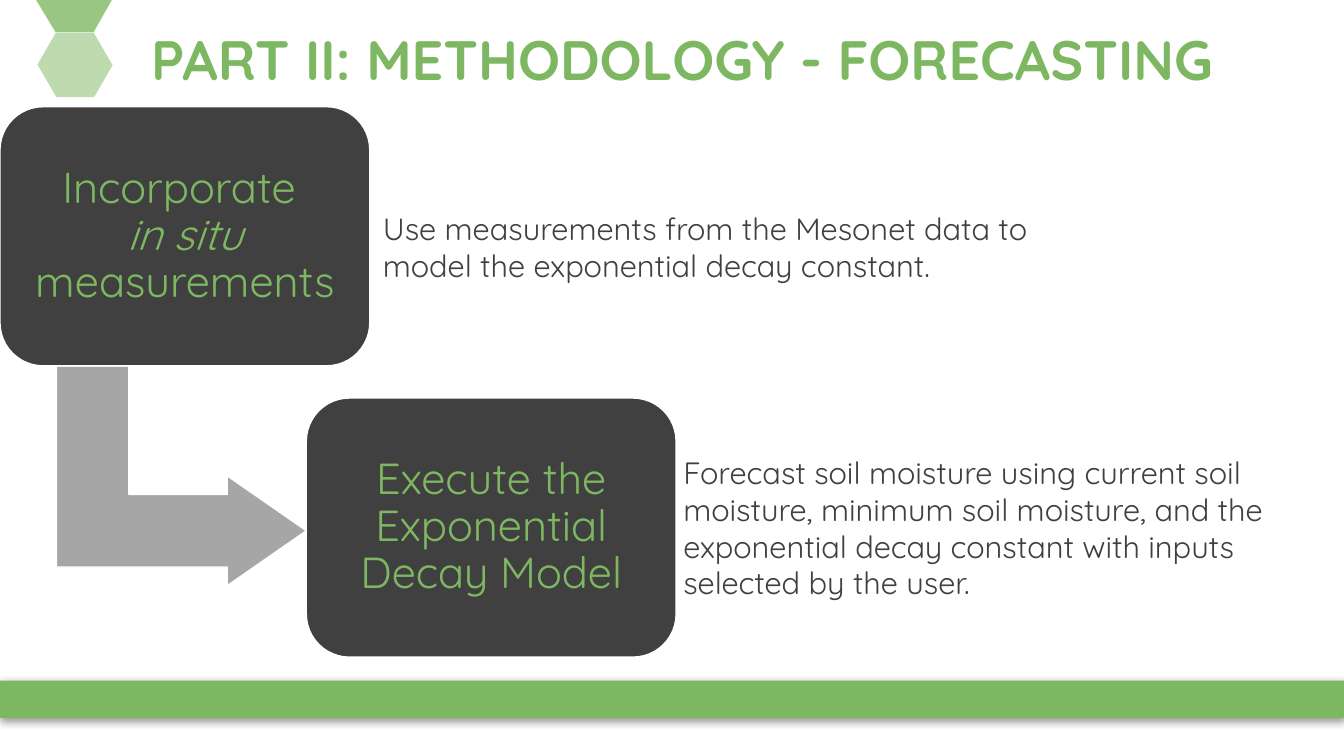
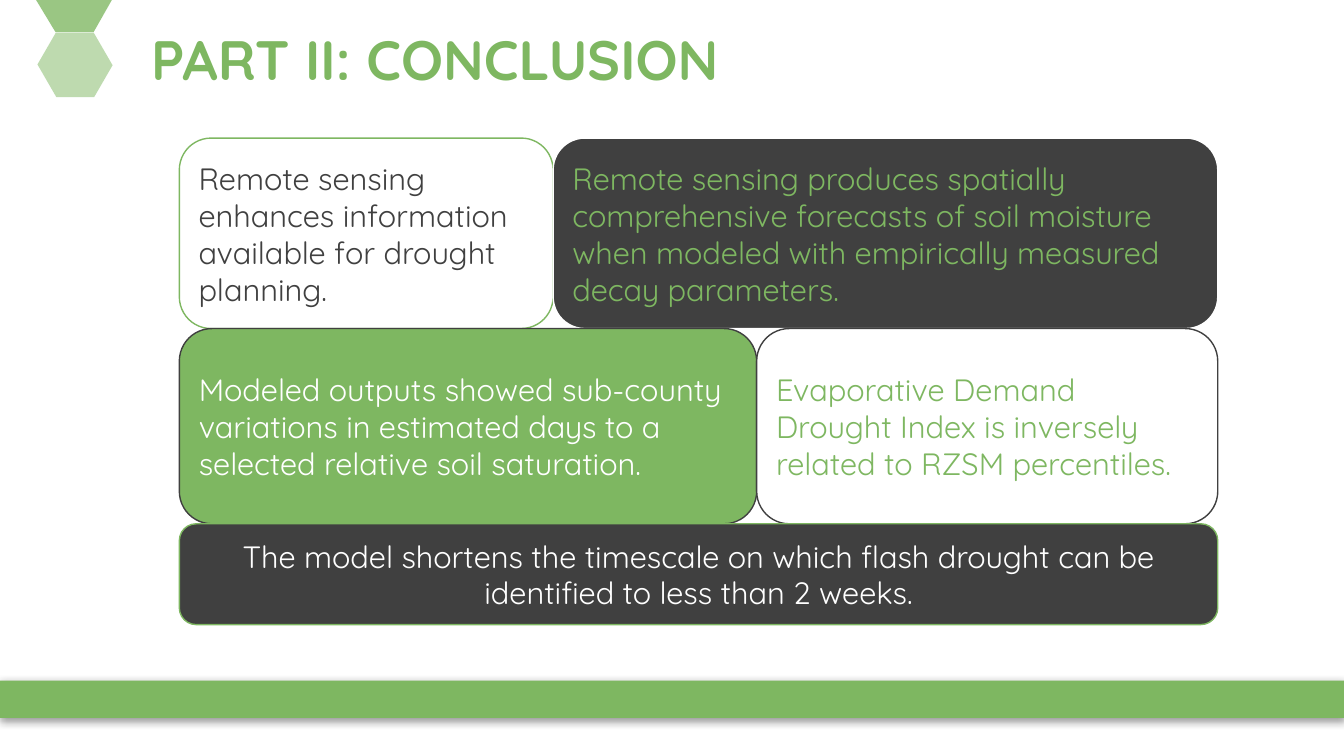
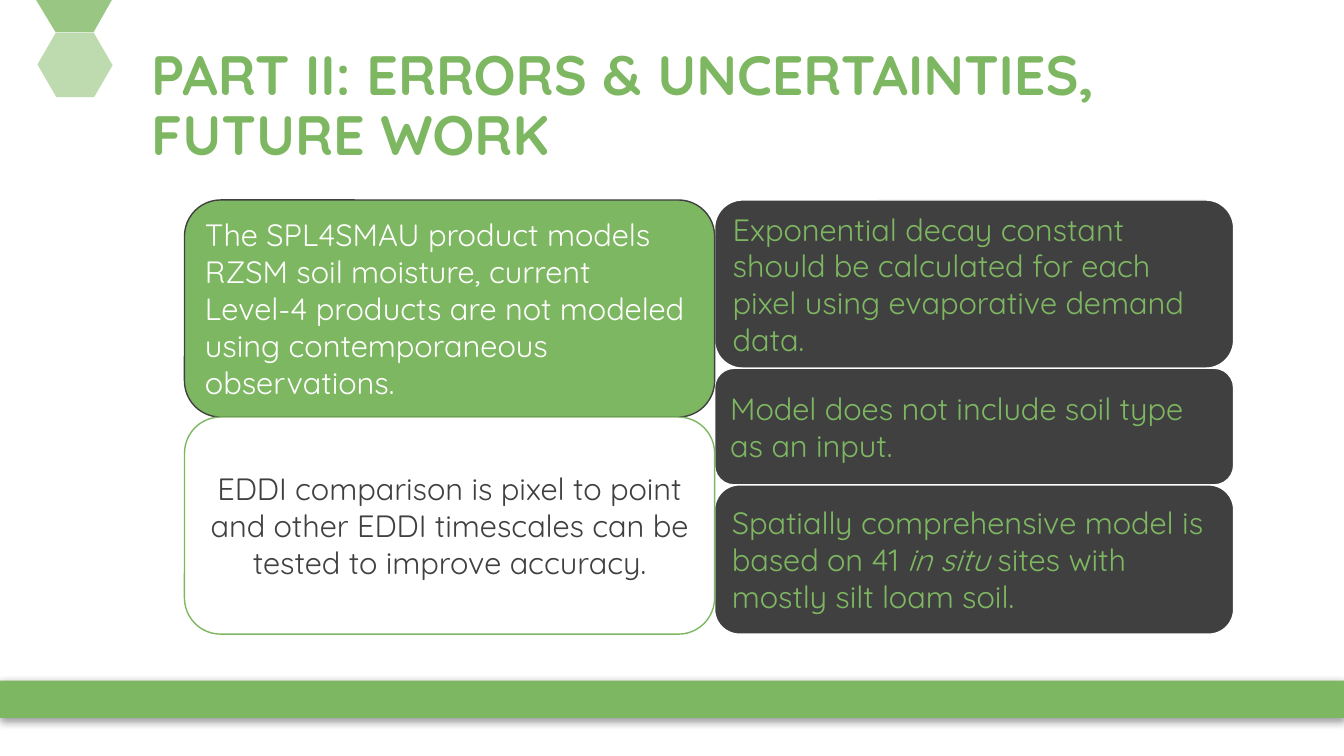
from dataclasses import dataclass

from lxml import etree
from pptx import Presentation
from pptx.dml.color import RGBColor
from pptx.enum.shapes import MSO_SHAPE
from pptx.enum.text import MSO_ANCHOR, PP_ALIGN
from pptx.oxml.ns import qn
from pptx.presentation import Presentation as Deck
from pptx.shapes.autoshape import Shape
from pptx.slide import Slide
from pptx.text.text import TextFrame
from pptx.util import Cm, Pt

# Theme
GREEN = RGBColor(0x7E, 0xB7, 0x61)
CHARCOAL = RGBColor(0x40, 0x40, 0x40)
GREY = RGBColor(0xA6, 0xA6, 0xA6)
WHITE = RGBColor(0xFF, 0xFF, 0xFF)
FONT = "Quicksand"
TITLE_SIZE, STEP_SIZE, BODY_SIZE = 39.6, 31, 22

LEFT, CENTER = PP_ALIGN.LEFT, PP_ALIGN.CENTER
TOP, MIDDLE = MSO_ANCHOR.TOP, MSO_ANCHOR.MIDDLE
ROUNDED, RECTANGLE = MSO_SHAPE.ROUNDED_RECTANGLE, MSO_SHAPE.RECTANGLE
HEXAGON, BENT_ARROW = MSO_SHAPE.HEXAGON, MSO_SHAPE.BENT_UP_ARROW

SLIDE_WIDTH, SLIDE_HEIGHT = 33.87, 19.05


@dataclass(frozen=True)
class Box:
    """Place and size in centimetres."""
    left: float
    top: float
    width: float
    height: float

    def lengths(self) -> tuple[Cm, Cm, Cm, Cm]:
        return Cm(self.left), Cm(self.top), Cm(self.width), Cm(self.height)


@dataclass(frozen=True)
class Look:
    fill: RGBColor
    line: RGBColor
    text: RGBColor


@dataclass(frozen=True)
class Card:
    text: str
    box: Box
    look: Look
    align: PP_ALIGN = LEFT


DARK = Look(CHARCOAL, WHITE, GREEN)
DARK_BANNER = Look(CHARCOAL, GREEN, WHITE)
SOLID_GREEN = Look(GREEN, CHARCOAL, WHITE)
GREEN_OUTLINE = Look(WHITE, GREEN, CHARCOAL)
DARK_OUTLINE = Look(WHITE, CHARCOAL, GREEN)


# Drawing helpers
def write(frame: TextFrame, text: str, size: float, color: RGBColor,
          align: PP_ALIGN = LEFT, anchor: MSO_ANCHOR = MIDDLE,
          bold: bool = False, spacing: float = 1.0) -> None:
    """Write one paragraph; words between asterisks become italic."""
    frame.word_wrap = True
    frame.vertical_anchor = anchor
    paragraph = frame.paragraphs[0]
    paragraph.alignment = align
    paragraph.line_spacing = spacing
    first, *others = text.split("*")
    paragraph.text = first
    for part in others:
        paragraph.add_run().text = part
    for index, run in enumerate(paragraph.runs):
        run.font.name = FONT
        run.font.size = Pt(size)
        run.font.color.rgb = color
        run.font.bold = bold
        run.font.italic = index % 2 == 1


def paint(shape: Shape, fill: RGBColor, line: RGBColor | None = None,
          opacity: int = 100) -> None:
    shape.shadow.inherit = False
    shape.fill.solid()
    shape.fill.fore_color.rgb = fill
    if line is None:
        shape.line.fill.background()
    else:
        shape.line.color.rgb = line
        shape.line.width = Pt(1)
    if opacity < 100:
        color = shape._element.spPr.find(qn("a:solidFill"))[0]
        etree.SubElement(color, qn("a:alpha"), val=str(opacity * 1000))


def add_drop_shadow(shape: Shape) -> None:
    effects = shape._element.spPr.find(qn("a:effectLst"))
    shadow = etree.SubElement(effects, qn("a:outerShdw"), blurRad=str(Pt(6)),
                              dist=str(Pt(2)), dir="5400000", algn="t", rotWithShape="0")
    color = etree.SubElement(shadow, qn("a:srgbClr"), val="000000")
    etree.SubElement(color, qn("a:alpha"), val="40000")


def add_text(slide: Slide, text: str, box: Box) -> None:
    frame = slide.shapes.add_textbox(*box.lengths()).text_frame
    write(frame, text, BODY_SIZE, CHARCOAL, anchor=TOP)


def add_card(slide: Slide, card: Card) -> None:
    shape = slide.shapes.add_shape(ROUNDED, *card.box.lengths())
    paint(shape, card.look.fill, card.look.line)
    write(shape.text_frame, card.text, BODY_SIZE, card.look.text, card.align)


def add_step(slide: Slide, text: str, box: Box) -> None:
    shape = slide.shapes.add_shape(ROUNDED, *box.lengths())
    paint(shape, DARK.fill, DARK.line)
    frame = shape.text_frame
    frame.margin_left = frame.margin_right = Cm(0.33)
    frame.margin_top = frame.margin_bottom = Cm(0.33)
    write(frame, text, STEP_SIZE, DARK.text, CENTER, spacing=0.9)


def start_slide(deck: Deck, title: str, title_height: float = 1.09) -> Slide:
    """Add a slide with the hexagons, footer band and title."""
    slide = deck.slides.add_slide(deck.slide_layouts[6])
    shapes = slide.shapes

    # Hexagon cut by the top edge, and the whole one below it
    outline = shapes.build_freeform(Cm(0.91), Cm(0))
    outline.add_line_segments([(Cm(2.82), Cm(0)), (Cm(2.36), Cm(0.81)), (Cm(1.4), Cm(0.81))])
    paint(outline.convert_to_shape(), GREEN, opacity=78)
    hexagon = shapes.add_shape(HEXAGON, *Box(0.95, 0.81, 1.88, 1.65).lengths())
    hexagon.adjustments[0] = 0.288
    hexagon.rotation = 120
    paint(hexagon, GREEN, opacity=50)

    # Footer band
    band = shapes.add_shape(RECTANGLE, *Box(0, 17.15, SLIDE_WIDTH, 0.94).lengths())
    paint(band, GREEN)
    add_drop_shadow(band)

    # Title
    heading = shapes.add_textbox(*Box(3.56, 1.02, 29.21, title_height).lengths())
    write(heading.text_frame, title, TITLE_SIZE, GREEN, bold=True, spacing=0.9)
    return slide


# Slides
def add_methodology(deck: Deck) -> None:
    slide = start_slide(deck, "PART II: METHODOLOGY - FORECASTING")

    arrow = slide.shapes.add_shape(BENT_ARROW, *Box(1.8, 8.84, 5.54, 6.3).lengths())
    arrow.rotation = 90
    for index, value in enumerate((0.33, 0.25, 0.36)):
        arrow.adjustments[index] = value
    paint(arrow, GREY, WHITE)

    step_width, step_height = 9.32, 6.53
    add_step(slide, "Incorporate \v*in situ* measurements",
             Box(0, 2.69, step_width, step_height))
    add_step(slide, "Execute the Exponential Decay Model",
             Box(7.72, 10.03, step_width, step_height))

    add_text(slide, "Use measurements from the Mesonet data to model the exponential "
             "decay constant.", Box(9.4, 5.16, 17.58, 3.07))
    add_text(slide, "Forecast soil moisture using current soil moisture, minimum soil "
             "moisture, and the exponential decay constant with inputs selected by the "
             "user.", Box(16.97, 11.3, 16.51, 4.01))


def add_conclusion(deck: Deck) -> None:
    slide = start_slide(deck, "PART II: CONCLUSION")
    left, top, width = 4.52, 3.48, 26.17

    # Rows of cards: height, width of the first card, contents
    rows = [
        (4.8, 9.42, [
            ("Remote sensing enhances information available for drought planning.",
             GREEN_OUTLINE, LEFT),
            ("Remote sensing produces spatially comprehensive forecasts of soil moisture "
             "when modeled with empirically measured decay parameters.", DARK, LEFT)]),
        (4.92, 14.55, [
            ("Modeled outputs showed sub-county variations in estimated days to a "
             "selected relative soil saturation.", SOLID_GREEN, LEFT),
            ("Evaporative Demand Drought Index is inversely related to RZSM percentiles.",
             DARK_OUTLINE, LEFT)]),
        (2.54, width, [
            ("The model shortens the timescale on which flash drought can be identified "
             "to less than 2 weeks.", DARK_BANNER, CENTER)]),
    ]
    for height, first_width, findings in rows:
        places = [(left, first_width), (left + first_width, width - first_width)]
        for (text, look, align), (card_left, card_width) in zip(findings, places):
            add_card(slide, Card(text, Box(card_left, top, card_width, height), look, align))
        top += height


def add_errors(deck: Deck) -> None:
    slide = start_slide(deck, "PART II: ERRORS & UNCERTAINTIES, FUTURE WORK", 3.4)

    # Columns of stacked cards: left, width, contents with heights
    columns = [
        (18.01, 13.08, [
            ("Exponential decay constant should be calculated for each pixel using "
             "evaporative demand data.", 4.24, DARK, LEFT),
            ("Model does not include soil type as an input.", 2.94, DARK, LEFT),
            ("Spatially comprehensive model is based on 41 *in situ *sites with mostly "
             "silt loam soil.", 3.76, DARK, LEFT)]),
        (4.65, 13.36, [
            ("The SPL4SMAU product models RZSM soil moisture, current Level-4 products "
             "are not modeled using contemporaneous observations.", 5.47, SOLID_GREEN, LEFT),
            ("EDDI comparison is pixel to point and other EDDI timescales can be tested "
             "to improve accuracy.", 5.47, GREEN_OUTLINE, CENTER)]),
    ]
    for left, width, issues in columns:
        top = 5.04
        for text, height, look, align in issues:
            add_card(slide, Card(text, Box(left, top, width, height), look, align))
            top += height


def main() -> None:
    deck = Presentation()
    deck.slide_width, deck.slide_height = Cm(SLIDE_WIDTH), Cm(SLIDE_HEIGHT)
    add_methodology(deck)
    add_conclusion(deck)
    add_errors(deck)
    deck.save("out.pptx")


if __name__ == "__main__":
    main()
